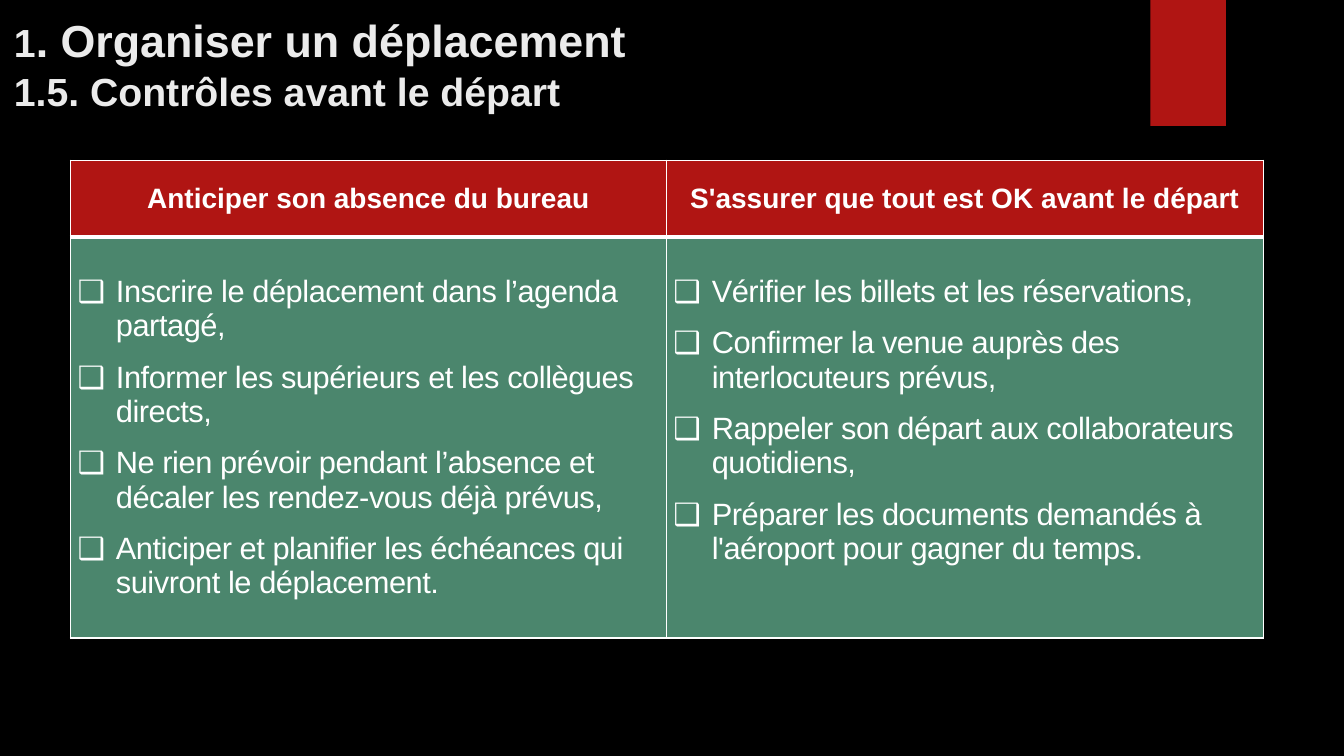
from pptx import Presentation
from pptx import util as u
from pptx.dml.color import RGBColor
from pptx.enum import shapes, text
from pptx.oxml import parse_xml
from pptx.oxml.ns import nsdecls

# Content
TITLE = [("1", 28), (". Organiser un déplacement", 32), None,
         ("1.5. Contrôles avant le départ", 28)]  # None: line break
COLUMNS = [
    dict(head="Anticiper son absence du bureau", width=5.91, bottom=0,
         checks=["Inscrire le déplacement dans l’agenda partagé,",
                 "Informer les supérieurs et les collègues directs,",
                 "Ne rien prévoir pendant l’absence et décaler les rendez-vous déjà prévus,",
                 "Anticiper et planifier les échéances qui suivront le déplacement."]),
    dict(head="S'assurer que tout est OK avant le départ", width=5.92, bottom=0.34,
         checks=["Vérifier les billets et les réservations,",
                 "Confirmer la venue auprès des interlocuteurs prévus,",
                 "Rappeler son départ aux collaborateurs quotidiens,",
                 "Préparer les documents demandés à l'aéroport pour gagner du temps."]),
]
ROWS = [0.76, 3.98]
C = dict(back="000000", red="B01513", green="4B866D", title="EBEBEB", white="FFFFFF")


def rgb(name):
    return RGBColor.from_string(C[name])


def add_run(p, txt, size, color="white", bold=False, spacing=None):
    r = p.add_run()
    r.text = txt
    f = r.font
    f.name, f.size, f.bold = "Arial", u.Pt(size), bold
    f.color.rgb = rgb(color)
    if spacing is not None:
        r._r.get_or_add_rPr().set("spc", str(round(spacing * 100)))


def add_bullet(p, char="❑", indent=0.38):
    pPr = p._p.get_or_add_pPr()
    pPr.set("marL", str(u.Inches(indent)))
    pPr.set("indent", str(-u.Inches(indent)))
    pPr.append(parse_xml(f'<a:buFont {nsdecls("a")} typeface="Arial"/>'))
    pPr.append(parse_xml(f'<a:buChar {nsdecls("a")} char="{char}"/>'))


def format_cell(cell, fill, bottom_line=1, bottom=0):
    tcPr = cell._tc.get_or_add_tcPr()
    for side, width in dict(L=1, R=1, T=1, B=bottom_line).items():
        tcPr.append(parse_xml(
            f'<a:ln{side} {nsdecls("a")} w="{u.Pt(width)}"><a:solidFill>'
            f'<a:srgbClr val="{C["white"]}"/></a:solidFill></a:ln{side}>'))
    cell.fill.solid()
    cell.fill.fore_color.rgb = rgb(fill)
    cell.margin_left = cell.margin_right = u.Inches(0.07)
    cell.margin_top, cell.margin_bottom = 0, u.Inches(bottom)
    cell.vertical_anchor = text.MSO_ANCHOR.MIDDLE


prs = Presentation()
prs.slide_width, prs.slide_height = u.Inches(13.33), u.Inches(7.5)
s = prs.slides.add_slide(prs.slide_layouts[6])
s.background.fill.solid()
s.background.fill.fore_color.rgb = rgb("back")

# Red tab at the top
sp = s.shapes.add_shape(shapes.MSO_SHAPE.RECTANGLE, u.Inches(11.41), 0,
                        u.Inches(0.75), u.Inches(1.25))
sp.shadow.inherit = False
sp.fill.solid()
sp.fill.fore_color.rgb = rgb("red")
sp.line.fill.background()

# Title
tf = s.shapes.add_textbox(*map(u.Inches, (0.04, 0.06, 11.19, 1.12))).text_frame
tf.word_wrap = True
tf.vertical_anchor = text.MSO_ANCHOR.BOTTOM
p = tf.paragraphs[0]
for part in TITLE:
    if part:
        add_run(p, *part, color="title", bold=True)
    else:
        p.add_line_break()

# Table of checks
tbl = s.shapes.add_table(len(ROWS), len(COLUMNS), u.Inches(0.7), u.Inches(1.59),
                         u.Inches(sum(c["width"] for c in COLUMNS)),
                         u.Inches(sum(ROWS))).table
tbl.horz_banding = False
for row, height in zip(tbl.rows, ROWS):
    row.height = u.Inches(height)
for i, col in enumerate(COLUMNS):
    tbl.columns[i].width = u.Inches(col["width"])
    head, body = tbl.cell(0, i), tbl.cell(1, i)
    format_cell(head, "red", bottom_line=3)
    p = head.text_frame.paragraphs[0]
    p.alignment = text.PP_ALIGN.CENTER
    add_run(p, col["head"], 20, bold=True)

    format_cell(body, "green", bottom=col["bottom"])
    tf = body.text_frame
    for j, check in enumerate(col["checks"]):
        p = tf.add_paragraph() if j else tf.paragraphs[0]
        add_bullet(p)
        p.space_before = u.Pt(12 if j else 0)
        add_run(p, check, 22, spacing=-0.3)

prs.save("out.pptx")
